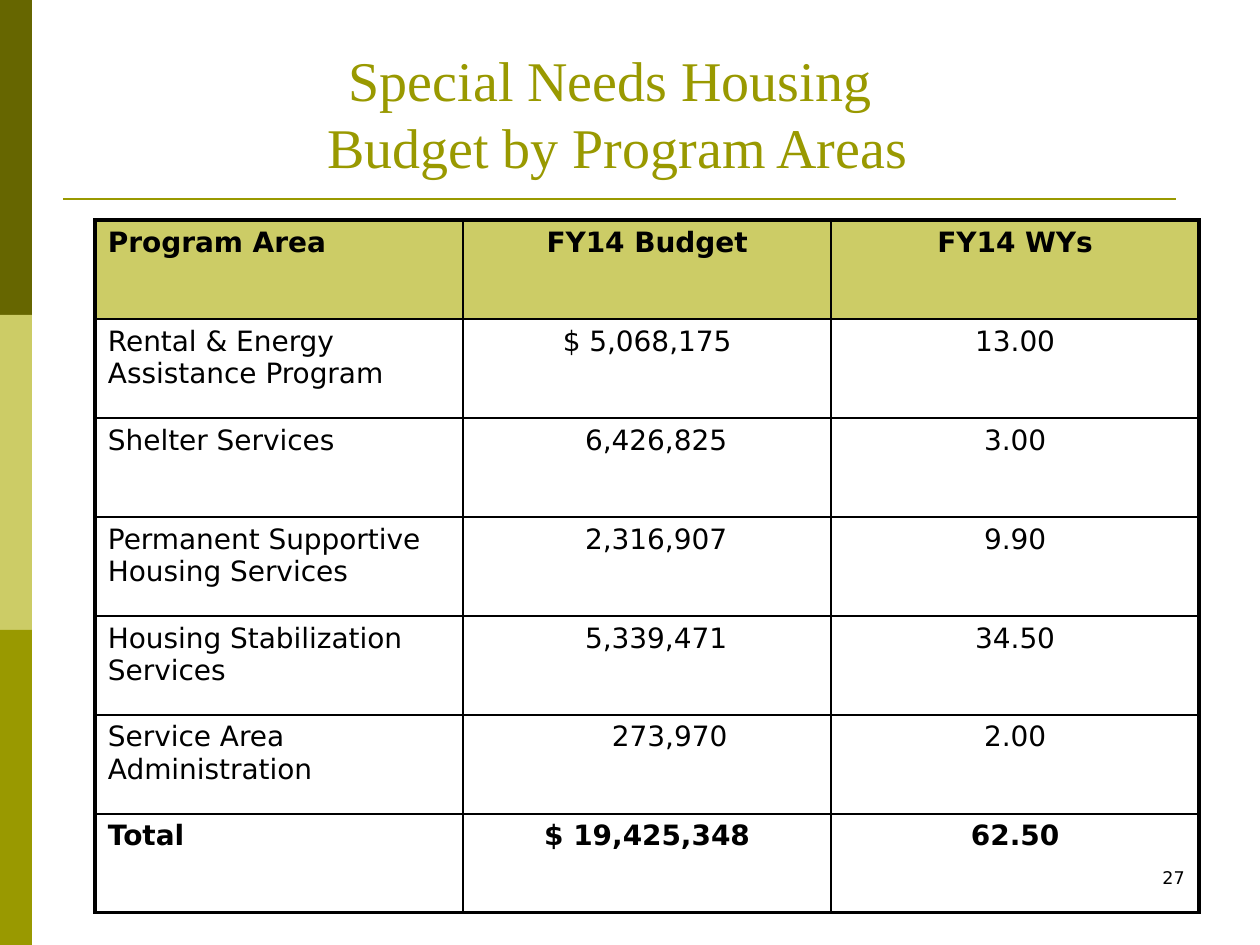
from lxml.etree import SubElement
from pptx import Presentation
from pptx.dml.color import RGBColor
from pptx.enum.shapes import MSO_CONNECTOR, MSO_SHAPE
from pptx.enum.text import MSO_ANCHOR, PP_ALIGN
from pptx.oxml.ns import qn
from pptx.util import Emu, Pt

SCALE = 914400 / 126
OLIVE, LIGHT, DARK, BLACK = "999900", "CCCC66", "666600", "000000"
SANS, SERIF = "DejaVu Sans", "Times New Roman"
CELL_MARGIN = 13
HEADER = ("Program Area", "FY14 Budget", "FY14 WYs")
PROGRAMS = [
    ("Rental & Energy Assistance Program", "$ 5,068,175", "13.00"),
    ("Shelter Services", "6,426,825", "3.00"),
    ("Permanent Supportive Housing Services", "2,316,907", "9.90"),
    ("Housing Stabilization Services", "5,339,471", "34.50"),
    ("Service Area Administration", "273,970", "2.00"),
]
TOTAL = ("Total", "$ 19,425,348", "62.50")
BUDGET_INDENTS = {"6,426,825": 18, "2,316,907": 18, "5,339,471": 18, "273,970": 45}


def px(n):
    """Turn pixels into EMU."""
    return Emu(round(n * SCALE))


def rgb(value):
    """Turn a hex string into a colour."""
    return RGBColor.from_string(value)


def write(tf, text, size=16, font=SANS, color=BLACK, bold=False,
          align=PP_ALIGN.LEFT, anchor=MSO_ANCHOR.TOP):
    """Put formatted text into a text frame."""
    tf.word_wrap = True
    tf.vertical_anchor = anchor
    p = tf.paragraphs[0]
    p.text = text
    p.alignment = align
    for r in p.runs:
        r.font.size = Pt(size)
        r.font.name = font
        r.font.bold = bold
        r.font.color.rgb = rgb(color)


def add_text(s, x, y, w, h, text, **style):
    """Add a text box."""
    sp = s.shapes.add_textbox(px(x), px(y), px(w), px(h))
    write(sp.text_frame, text, **style)


def add_bar(s, x, y, w, h, color):
    """Add a plain filled rectangle."""
    sp = s.shapes.add_shape(MSO_SHAPE.RECTANGLE, px(x), px(y), px(w), px(h))
    sp.shadow.inherit = False
    sp.fill.solid()
    sp.fill.fore_color.rgb = rgb(color)
    sp.line.fill.background()


def add_rule(s, x1, x2, y, color, width):
    """Add a horizontal line."""
    cx = s.shapes.add_connector(MSO_CONNECTOR.STRAIGHT, px(x1), px(y), px(x2), px(y))
    cx.line.color.rgb = rgb(color)
    cx.line.width = Pt(width)
    SubElement(cx._element.spPr, qn("a:effectLst"))


def set_borders(cell, **widths):
    """Give each named side of a cell a black line."""
    tc_pr = cell._tc.get_or_add_tcPr()
    for side, width in widths.items():
        ln = SubElement(tc_pr, qn(f"a:ln{side}"), w=str(Pt(width)))
        fill = SubElement(ln, qn("a:solidFill"))
        SubElement(fill, qn("a:srgbClr"), val=BLACK)


def add_budget_table(s, x, y, col_w, row_h):
    """Add the budget table with its heavy outer frame."""
    rows = [HEADER, *PROGRAMS, TOTAL]
    last_row, last_col = len(rows) - 1, len(HEADER) - 1
    frame = s.shapes.add_table(len(rows), len(HEADER), px(x), px(y),
                               px(col_w * len(HEADER)), px(row_h * len(rows)))
    table = frame.table
    table.first_row = table.horz_banding = False
    for col in table.columns:
        col.width = px(col_w)
    for i, row in enumerate(rows):
        table.rows[i].height = px(row_h)
        for j, text in enumerate(row):
            cell = table.cell(i, j)
            cell.margin_left = px(CELL_MARGIN + BUDGET_INDENTS.get(text, 0))
            write(cell.text_frame, text, bold=i in (0, last_row),
                  align=PP_ALIGN.CENTER if j else PP_ALIGN.LEFT)
            set_borders(cell, L=1 if j else 2.25, R=2.25 if j == last_col else 1,
                        T=1 if i else 2.25, B=2.25 if i == last_row else 1)
            if i == 0:
                cell.fill.solid()
                cell.fill.fore_color.rgb = rgb(LIGHT)
            else:
                cell.fill.background()


def main():
    """Build the slide and save it."""
    prs = Presentation()
    prs.slide_width, prs.slide_height = px(1260), px(945)
    s = prs.slides.add_slide(prs.slide_layouts[6])
    for i, color in enumerate((DARK, LIGHT, OLIVE)):
        add_bar(s, 0, 315 * i, 32, 315, color)
    add_rule(s, 63, 1176, 199, OLIVE, 1.5)
    add_text(s, 903, 861, 294, 63, "27", size=10, align=PP_ALIGN.RIGHT)
    add_text(s, 125, 63, 985, 123, "Special Needs Housing \nBudget by Program Areas",
             size=32, font=SERIF, color=OLIVE, align=PP_ALIGN.CENTER,
             anchor=MSO_ANCHOR.BOTTOM)
    add_budget_table(s, 95, 220, 368, 99)
    prs.save("out.pptx")


if __name__ == "__main__":
    main()
